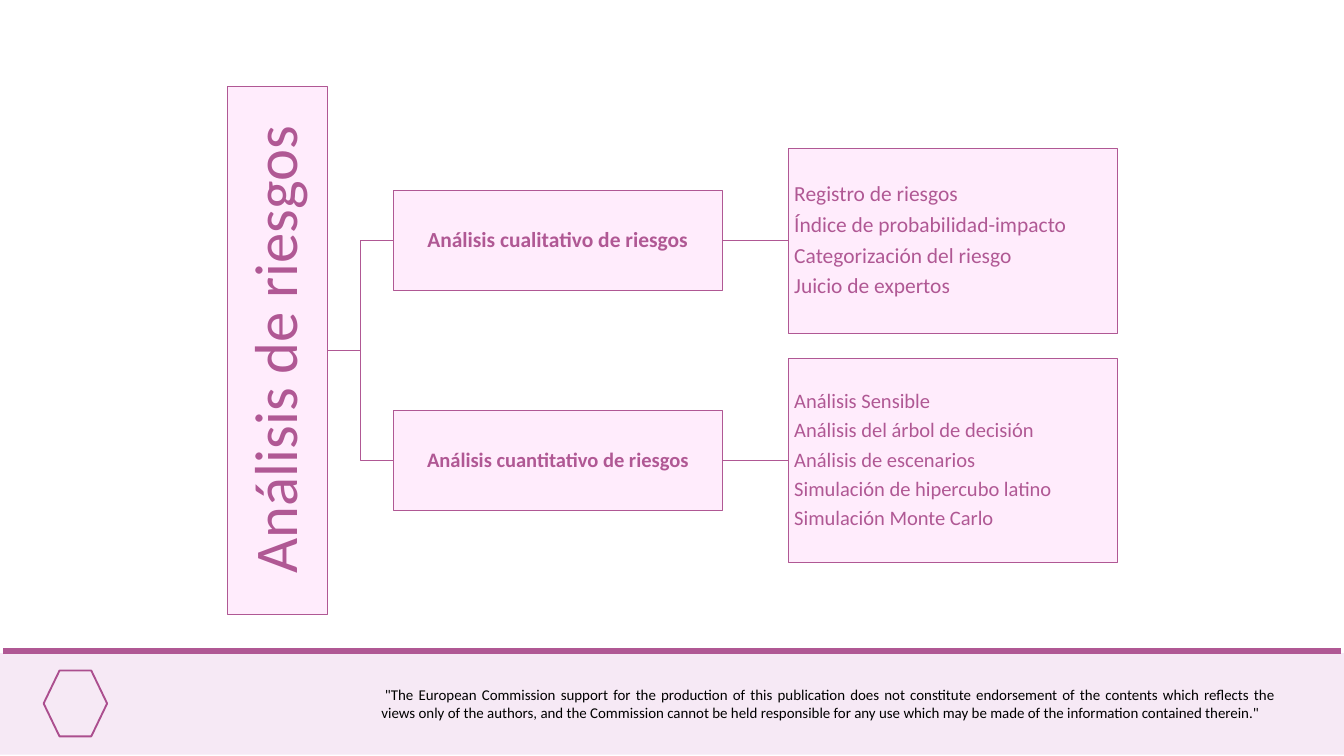
from lxml.etree import SubElement
from pptx import Presentation
from pptx.dml.color import RGBColor
from pptx.enum.shapes import MSO_CONNECTOR as Link, MSO_SHAPE as Shape
from pptx.enum.text import MSO_ANCHOR as Anchor, MSO_AUTO_SIZE as Fit, PP_ALIGN as Align
from pptx.oxml.ns import qn
from pptx.util import Cm, Pt

COLOURS = {"plum": "B05894", "blush": "FFECFC", "band": "F6E9F5", "icon": "AB4E8E", "text": "000000"}
COLOURS = {name: RGBColor.from_string(code) for name, code in COLOURS.items()}

BRANCHES = [
    {"name": "Análisis cualitativo de riesgos", "middle": 9.1, "size": 23, "list_height": 6.99,
     "items": ["Registro de riesgos", "Índice de probabilidad-impacto",
               "Categorización del riesgo", "Juicio de expertos"]},
    {"name": "Análisis cuantitativo de riesgos", "middle": 17.41, "size": 22, "list_height": 7.72,
     "items": ["Análisis Sensible", "Análisis del árbol de decisión", "Análisis de escenarios",
               "Simulación de hipercubo latino", "Simulación Monte Carlo"]},
]
NOTICE = ('"The European Commission support for the production of this publication does not constitute '
          "endorsement of the contents which reflects the views only of the authors, and the Commission "
          "cannot be held responsible for any use which may be made of the information contained "
          'therein."')

# Diagram measures in centimetres
ROOT_MIDDLE, ROOT_CENTRE, ROOT_LENGTH = 13.25, 10.49, 19.96
BAR_HEIGHT, BOX_WIDTH = 3.78, 12.45
BRANCH_LEFT, LIST_LEFT = 14.86, 29.79


def fill_box(box, place, lines, size, bold=False, align=Align.CENTER, inset=0.05):
    box.left, box.top, box.width, box.height = [Cm(value) for value in place]
    box.fill.solid()
    box.fill.fore_color.rgb = COLOURS["blush"]
    box.line.color.rgb = COLOURS["plum"]
    box.line.width = Pt(1)
    frame = box.text_frame
    frame.text = "\n".join(lines)
    frame_format = {"word_wrap": True, "auto_size": Fit.NONE, "vertical_anchor": Anchor.MIDDLE,
                    "margin_left": Cm(inset), "margin_right": Cm(0.05),
                    "margin_top": Cm(0.05), "margin_bottom": Cm(0.05)}
    for name, value in frame_format.items():
        setattr(frame, name, value)
    for para in frame.paragraphs:
        properties = para._p.get_or_add_pPr()
        properties.set("marL", "0")
        properties.set("indent", "0")
        SubElement(properties, qn("a:buNone"))
        para_format = {"alignment": align, "line_spacing": 0.9,
                       "space_before": Pt(0), "space_after": Pt(0.35 * size)}
        for name, value in para_format.items():
            setattr(para, name, value)
        font = para.runs[0].font
        for name, value in {"name": "Calibri", "size": Pt(size), "bold": bold}.items():
            setattr(font, name, value)
        font.color.rgb = COLOURS["plum"]


def join(kind, start, end, width=1):
    line = page.shapes.add_connector(kind, *[Cm(value) for value in (*start, *end)])
    line.line.color.rgb = COLOURS["plum"]
    line.line.width = Pt(width)
    SubElement(line._element.spPr, qn("a:effectLst"))


deck = Presentation()
deck.slide_width, deck.slide_height = Cm(50.8), Cm(28.58)
page = deck.slides.add_slide(deck.slide_layouts[3])
title, *lists = page.placeholders

# Footer band, rule and icon
band = page.shapes.add_shape(Shape.RECTANGLE, Cm(0), Cm(24.69), Cm(50.8), Cm(3.84))
band.shadow.inherit = False
band.fill.solid()
band.fill.fore_color.rgb = COLOURS["band"]
band.line.fill.background()
join(Link.STRAIGHT, (0.13, 24.61), (50.67, 24.61), width=6.75)

icon = page.shapes.add_shape(Shape.HEXAGON, Cm(1.65), Cm(25.35), Cm(2.4), Cm(2.49))
icon.shadow.inherit = False
icon.fill.background()
icon.line.color.rgb = COLOURS["icon"]
icon.line.width = Pt(2)

# Footer notice
notice = page.shapes.add_textbox(Cm(14.17), Cm(25.78), Cm(34.29), Cm(1.63))
notice.text_frame.word_wrap = True
para = notice.text_frame.paragraphs[0]
para.alignment = Align.JUSTIFY
para._p.get_or_add_pPr().set("indent", str(Cm(0.13)))
span = para.add_run()
span.text = NOTICE
span.font.name, span.font.size = "Calibri", Pt(16)
span.font.color.rgb = COLOURS["text"]

# Root of the tree, turned to read upwards
root_place = (ROOT_CENTRE - ROOT_LENGTH / 2, ROOT_MIDDLE - BAR_HEIGHT / 2, ROOT_LENGTH, BAR_HEIGHT)
fill_box(title, root_place, ["Análisis de riesgos"], 65, inset=0.13)
title.rotation = 270

# Branches, each with its list and links
for branch, list_box in zip(BRANCHES, lists):
    middle, size, height = branch["middle"], branch["size"], branch["list_height"]
    branch_box = page.shapes.add_shape(Shape.RECTANGLE, 0, 0, 0, 0)
    branch_box.shadow.inherit = False
    fill_box(branch_box, (BRANCH_LEFT, middle - BAR_HEIGHT / 2, BOX_WIDTH, BAR_HEIGHT),
             [branch["name"]], size, bold=True)
    fill_box(list_box, (LIST_LEFT, middle - height / 2, BOX_WIDTH, height),
             branch["items"], size, align=Align.LEFT, inset=0.23)
    join(Link.ELBOW, (ROOT_CENTRE + BAR_HEIGHT / 2, ROOT_MIDDLE), (BRANCH_LEFT, middle))
    join(Link.STRAIGHT, (BRANCH_LEFT + BOX_WIDTH, middle), (LIST_LEFT, middle))

deck.save("out.pptx")
